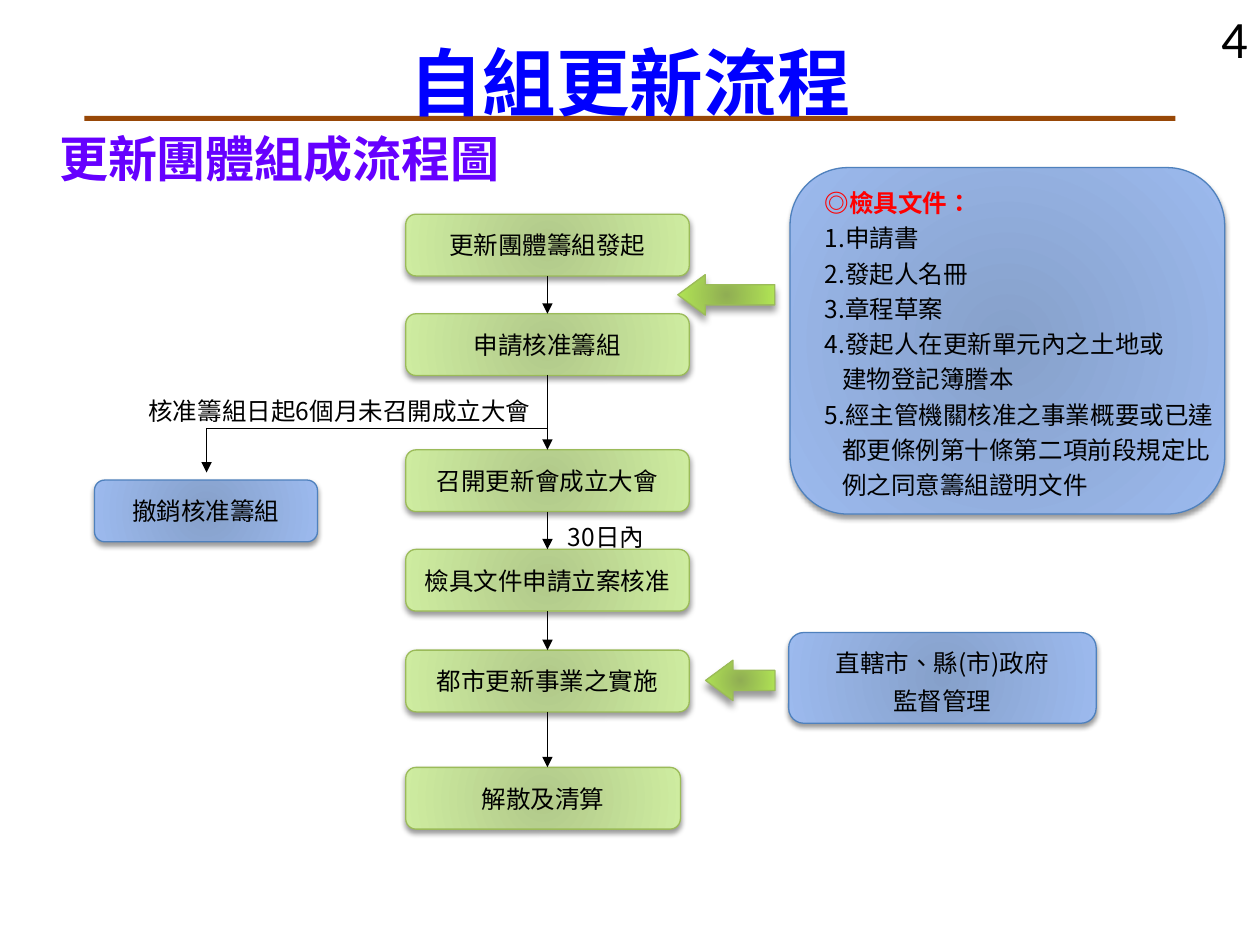
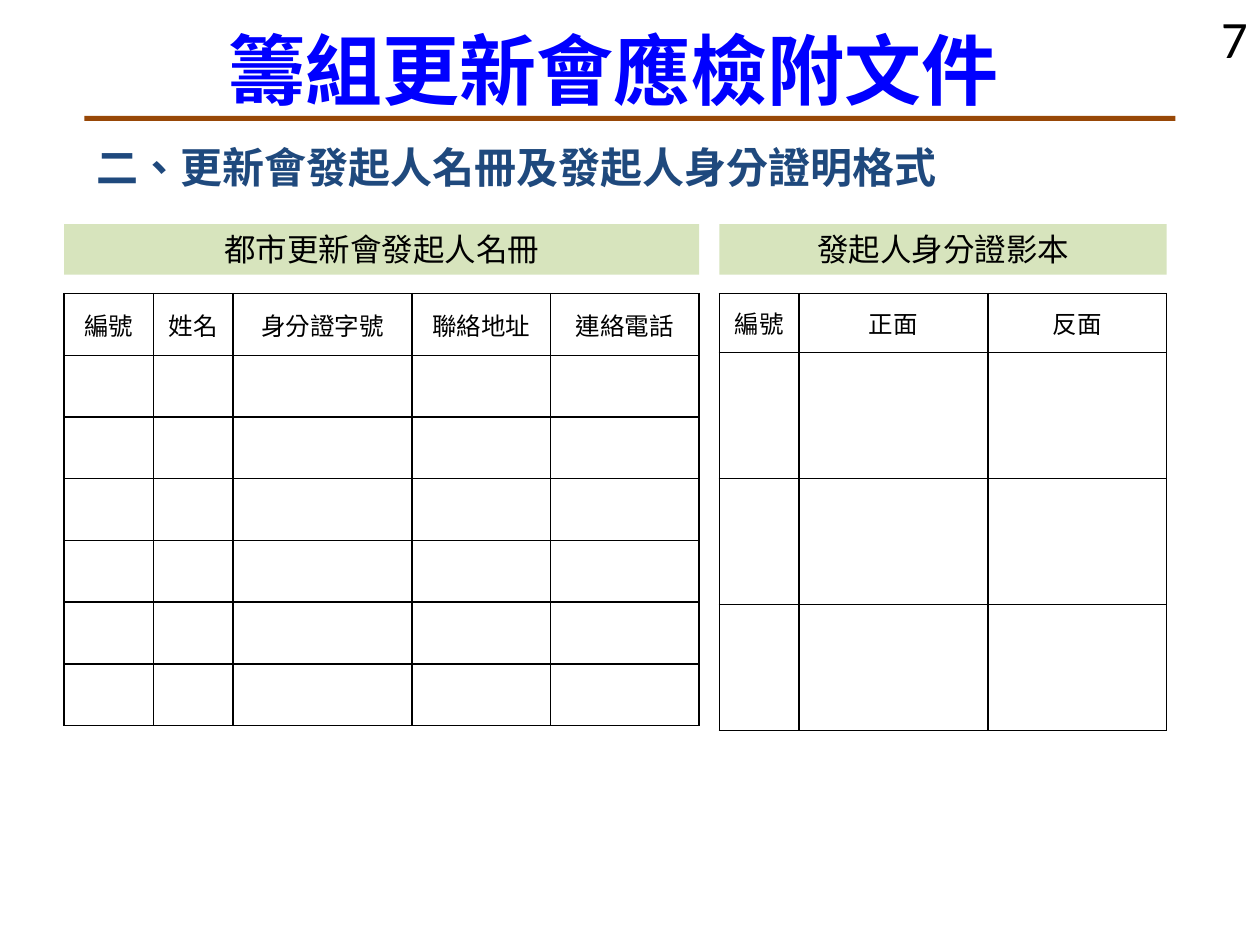
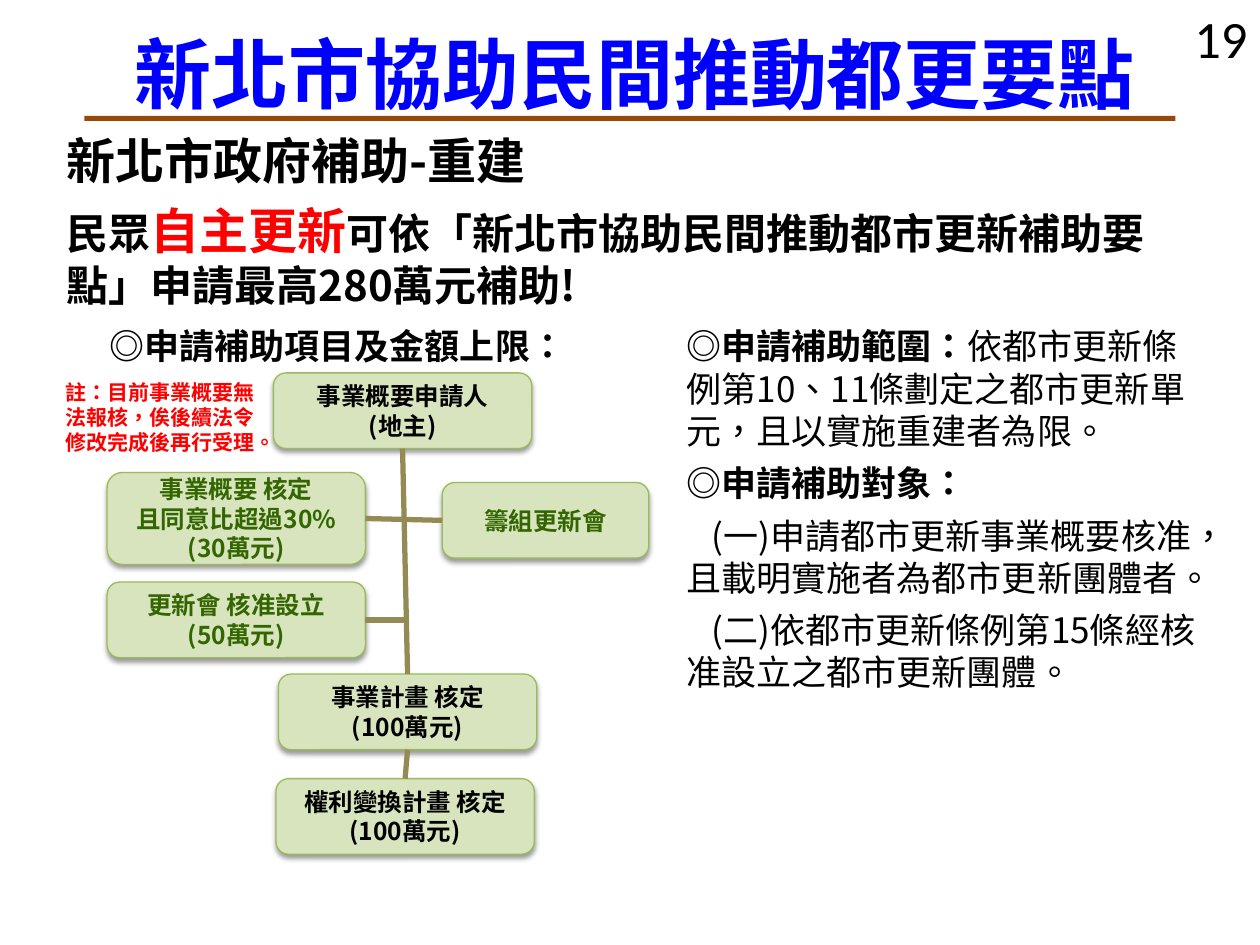
from dataclasses import dataclass
from lxml.etree import SubElement
from pptx import Presentation
from pptx.dml.color import RGBColor
from pptx.enum.shapes import MSO_CONNECTOR, MSO_SHAPE
from pptx.enum.text import MSO_ANCHOR, PP_ALIGN
from pptx.oxml.ns import qn
from pptx.util import Inches, Pt


@dataclass(frozen=True)
class Theme:
    font: str = "Noto Sans CJK SC"
    digit: str = "Calibri"
    black: str = "000000"
    red: str = "FF0000"
    blue: str = "0000FF"
    violet: str = "6600FF"
    navy: str = "1F497D"
    forest: str = "336600"
    band: str = "984807"
    pale: str = "D7E4BD"
    trunk: str = "948A54"
    edge: str = "9BBB59"
    green: tuple = ("B1C98A", "CEECA0", "9BBB59")
    sky: tuple = ("86A0CA", "9CBAEE", "4F81BD")
    lime: tuple = ("90AE53", "B3E854", "9BBB59")
    page: int = 30
    title: int = 44
    head: int = 28
    sub: int = 24
    body: int = 20
    label: int = 18
    small: int = 14
    note: int = 12


T = Theme()
LEFT, MID, RIGHT = PP_ALIGN.LEFT, PP_ALIGN.CENTER, PP_ALIGN.RIGHT
TIGHT = (0.06, 0.03)
ROOMY = (0.1, 0.05)

STEPS = [
    ("更新團體籌組發起", 1.7, 2.25),
    ("申請核准籌組", 2.49, 2.25),
    ("召開更新會成立大會", 3.57, 2.25),
    ("檢具文件申請立案核准", 4.36, 2.25),
    ("都市更新事業之實施", 5.16, 2.25),
    ("解散及清算", 6.09, 2.18),
]
PAPERS = [
    ("1.申請書", 0.12),
    ("2.發起人名冊", 0.12),
    ("3.章程草案", 0.12),
    ("4.發起人在更新單元內之土地或", 0.12),
    ("建物登記簿謄本", 0.26),
    ("5.經主管機關核准之事業概要或已達", 0.12),
    ("都更條例第十條第二項前段規定比", 0.26),
    ("例之同意籌組證明文件", 0.26),
]
FORMS = [
    ("都市更新會發起人名冊", 0.51, ["編號", "姓名", "身分證字號", "聯絡地址", "連絡電話"],
     [0.71, 0.63, 1.42, 1.1, 1.18], [0.49] * 7),
    ("發起人身分證影本", 5.71, ["編號", "正面", "反面"],
     [0.63, 1.5, 1.42], [0.47] + [1.0] * 3),
]
NODES = {
    "owner": (["事業概要申請人", "(地主)"], (2.17, 2.96, 2.05, 0.6), T.black),
    "union": (["籌組更新會"], (3.51, 3.83, 1.64, 0.6), T.forest),
    "found": (["更新會 核准設立", "(50萬元)"], (0.85, 4.62, 2.05, 0.6), T.forest),
    "brief": (["事業概要 核定", "且同意比超過30%", "(30萬元)"], (0.85, 3.75, 2.05, 0.73), T.forest),
    "rights": (["權利變換計畫 核定", "(100萬元)"], (2.19, 6.18, 2.05, 0.6), T.black),
    "plan": (["事業計畫 核定", "(100萬元)"], (2.21, 5.35, 2.05, 0.6), T.black),
}
LINKS = [("owner", 2, "plan", 0), ("plan", 2, "rights", 0), ("brief", 3, "union", 1)]
RULES = [
    ([("◎申請補助範圍：", True),
      ("依都市更新條例第10、11條劃定之都市更新單元，且以實施重建者為限。", False)], 0),
    ([("◎申請補助對象：", True)], 0),
    ([("(一)申請都市更新事業概要核准，且載明實施者為都市更新團體者。", False)], 0.2),
    ([("(二)依都市更新條例第15條經核准設立之都市更新團體。", False)], 0.2),
]


def rgb(code):
    return RGBColor.from_string(code)


def run(text, size=T.small, color=T.black, bold=False, font=T.font):
    return text, size, color, bold, font


def para(*runs, align=LEFT, gap=0, lead=None, left=0, first=0):
    return dict(runs=runs, align=align, gap=gap, lead=lead, left=left, first=first)


def write(frame, paras, anchor=MSO_ANCHOR.TOP, inset=ROOMY, wrap=True):
    frame.word_wrap = wrap
    frame.vertical_anchor = anchor
    frame.margin_left = frame.margin_right = Inches(inset[0])
    frame.margin_top = frame.margin_bottom = Inches(inset[1])
    fill_text(frame, paras)


def fill_text(frame, paras):
    for i, item in enumerate(paras):
        p = frame.add_paragraph() if i else frame.paragraphs[0]
        p.alignment = item["align"]
        if i and item["gap"]:
            p.space_before = Pt(item["gap"])
        if item["lead"]:
            p.line_spacing = item["lead"]
        props = p._p.get_or_add_pPr()
        props.set("marL", str(Inches(item["left"])))
        props.set("indent", str(Inches(item["first"])))
        for text, size, color, bold, font in item["runs"]:
            r = p.add_run()
            r.text = text
            r.font.size, r.font.bold, r.font.name = Pt(size), bold, font
            r.font.color.rgb = rgb(color)
            mark = r._r.get_or_add_rPr()
            mark.set("lang", "zh-TW")
            SubElement(mark, qn("a:ea"), typeface=font)


def add_text(slide, place, paras, **style):
    box = slide.shapes.add_textbox(*map(Inches, place))
    write(box.text_frame, paras, **style)


def add_box(slide, kind, place, fill, edge=None, glow=None):
    box = slide.shapes.add_shape(kind, *map(Inches, place))
    box.shadow.inherit = False
    if isinstance(fill, tuple):
        blend(box, fill)
    else:
        box.fill.solid()
        box.fill.fore_color.rgb = rgb(fill)
    if edge:
        box.line.color.rgb = rgb(edge)
        box.line.width = Pt(0.75)
    else:
        box.line.fill.background()
    if glow:
        shade(box, *glow)
    return box


def blend(box, tones):
    box.fill.gradient()
    for stop, tone in zip(box.fill.gradient_stops, tones):
        stop.color.rgb = rgb(tone)
    grad = box._element.spPr.find(qn("a:gradFill"))
    grad.remove(grad.find(qn("a:lin")))
    ring = SubElement(grad, qn("a:path"))
    ring.set("path", "circle")
    SubElement(ring, qn("a:fillToRect"), **dict.fromkeys("ltrb", "100000"))


def shade(box, blur, dist):
    group = box._element.spPr.find(qn("a:effectLst"))
    cast = SubElement(group, qn("a:outerShdw"), blurRad=str(Pt(blur)),
                      dist=str(Pt(dist)), dir="5400000", rotWithShape="0")
    tone = SubElement(cast, qn("a:srgbClr"), val=T.black)
    SubElement(tone, qn("a:alpha"), val="40000")


def add_card(slide, place, tones, paras, inset=TIGHT):
    card = add_box(slide, MSO_SHAPE.FLOWCHART_ALTERNATE_PROCESS, place, tones[:2], tones[2], (3, 2))
    write(card.text_frame, paras, anchor=MSO_ANCHOR.MIDDLE, inset=inset, wrap=False)
    return card


def add_line(slide, start, end, color=T.black, width=0.75, arrow=False):
    line = slide.shapes.add_connector(MSO_CONNECTOR.STRAIGHT, *map(Inches, start + end))
    line.line.color.rgb = rgb(color)
    line.line.width = Pt(width)
    if arrow:
        SubElement(line.line._get_or_add_ln(), qn("a:tailEnd"), type="triangle")
    SubElement(line._element.spPr, qn("a:effectLst"))
    return line


def add_grid(slide, place, heads, cols, rows):
    grid = slide.shapes.add_table(len(rows), len(cols), *map(Inches, place)).table
    grid.first_row = grid.horz_banding = False
    for col, width in zip(grid.columns, cols):
        col.width = Inches(width)
    for row, height in zip(grid.rows, rows):
        row.height = Inches(height)
    for cell in grid.iter_cells():
        cell.fill.background()
        props = cell._tc.get_or_add_tcPr()
        for i, side in enumerate(("lnL", "lnR", "lnT", "lnB")):
            rim = SubElement(props, qn("a:" + side), w=str(Pt(1)))
            SubElement(SubElement(rim, qn("a:solidFill")), qn("a:srgbClr"), val=T.black)
            props.insert(i, rim)
    for i, head in enumerate(heads):
        cell = grid.cell(0, i)
        cell.vertical_anchor = MSO_ANCHOR.MIDDLE
        fill_text(cell.text_frame, [para(run(head), align=MID)])


def start(deck, page, title, place, size=T.title, **style):
    slide = deck.slides.add_slide(deck.slide_layouts[6])
    add_text(slide, (7.67, 0, 2.33, 0.4),
             [para(run(page, T.page, font=T.digit), align=RIGHT)])
    add_box(slide, MSO_SHAPE.RECTANGLE, (0.67, 0.92, 8.66, 0.04), T.band)
    add_text(slide, place, [para(run(title, size, T.blue, True), align=MID)], **style)
    return slide


def draw_flow(deck):
    slide = start(deck, "4", "自組更新流程", (0, 0.29, 10, 0.71), 42,
                  anchor=MSO_ANCHOR.MIDDLE, inset=(0, 0))
    add_text(slide, (0.41, 0.99, 5, 0.74),
             [para(run("更新團體組成流程圖", T.head, T.violet, True))], inset=TIGHT)
    cards = [add_card(slide, (3.22, top, width, 0.49), T.green, [para(run(text), align=MID)])
             for text, top, width in STEPS]
    for upper, lower in zip(cards, cards[1:]):
        axis = upper.left + upper.width // 2
        line = add_line(slide, (4.34, upper.top.inches + 0.49), (4.34, lower.top.inches), arrow=True)
        line.begin_connect(upper, 2)
        if lower.left + lower.width // 2 == axis:
            line.end_connect(lower, 0)
        else:
            line.end_x = axis
    papers = [para(run("◎檢具文件：", color=T.red, bold=True), lead=1.2, left=0.12)]
    papers += [para(run(text), lead=1.2, left=left) for text, left in PAPERS]
    add_card(slide, (6.27, 1.33, 3.45, 2.75), T.sky, papers, (0.02, 0.03))
    add_line(slide, (1.64, 3.4), (4.34, 3.4))
    add_line(slide, (1.64, 3.4), (1.64, 3.75), arrow=True)
    add_card(slide, (0.75, 3.81, 1.77, 0.49), T.sky, [para(run("撤銷核准籌組"), align=MID)])
    add_card(slide, (6.26, 5.02, 2.44, 0.72), T.sky,
             [para(run(text), align=MID, lead=1.28) for text in ("直轄市、縣(市)政府", "監督管理")])
    for left, top, width in ((5.38, 2.18, 0.77), (5.6, 5.24, 0.55)):
        arrow = add_box(slide, MSO_SHAPE.LEFT_ARROW, (left, top, width, 0.32),
                        T.lime[:2], T.lime[2], (4, 3.4))
        arrow.adjustments[1] = 0.68
    for text, place in (("核准籌組日起6個月未召開成立大會", (1.06, 3.11, 3.27, 0.29)),
                        ("30日內", (4.31, 4.11, 1, 0.29))):
        add_text(slide, place, [para(run(text), align=MID)], inset=TIGHT)


def draw_forms(deck):
    slide = start(deck, "7", "籌組更新會應檢附文件", (1.69, 0.13, 6.37, 0.84), wrap=False)
    add_text(slide, (0.67, 1.07, 8.43, 0.91),
             [para(run("二、更新會發起人名冊及發起人身分證明格式", T.sub, T.navy, True))])
    for name, left, heads, cols, rows in FORMS:
        width = sum(cols)
        label = add_box(slide, MSO_SHAPE.RECTANGLE, (left, 1.78, width, 0.4), T.pale)
        write(label.text_frame, [para(run(name, T.label), align=MID)])
        add_grid(slide, (left, 2.33, width, sum(rows)), heads, cols, rows)


def draw_grant(deck):
    slide = start(deck, "19", "新北市協助民間推動都更要點", (0.04, 0.21, 10, 0.74),
                  anchor=MSO_ANCHOR.MIDDLE, inset=(0, 0))
    add_text(slide, (0.43, 0.99, 9.29, 1.53), [
        para(run("新北市政府補助-重建", T.head, bold=True)),
        para(run("民眾", T.sub, bold=True),
             run("自主更新", T.head, T.red, True),
             run("可依「新北市協助民間推動都市更新補助要點」申請最高280萬元補助!", T.sub, bold=True),
             gap=6),
    ])
    add_text(slide, (0.42, 2.96, 1.75, 0.71),
             [para(run("註：目前事業概要無法報核，俟後續法令修改完成後再行受理。", T.note, T.red, True))])
    add_text(slide, (0.77, 2.53, 3.88, 0.44),
             [para(run("◎申請補助項目及金額上限：", T.body, bold=True))], wrap=False)
    add_text(slide, (5.35, 2.53, 4.29, 3.05),
             [para(*(run(text, T.body, bold=bold) for text, bold in runs), gap=6, first=first)
              for runs, first in RULES])
    nodes = {}
    for key, (lines, place, color) in NODES.items():
        node = add_box(slide, MSO_SHAPE.ROUNDED_RECTANGLE, place, T.pale, T.edge, (3, 2))
        write(node.text_frame, [para(run(text, color=color, bold=True), align=MID) for text in lines],
              anchor=MSO_ANCHOR.MIDDLE)
        nodes[key] = node
    for head, out, tail, into in LINKS:
        line = add_line(slide, (0, 0), (1, 1), T.trunk, 3)
        line.begin_connect(nodes[head], out)
        line.end_connect(nodes[tail], into)
    twig = add_line(slide, (2.9, 4.92), (3.22, 4.92), T.trunk, 3)
    twig.begin_connect(nodes["found"], 3)


def main():
    deck = Presentation()
    deck.slide_width, deck.slide_height = Inches(10), Inches(7.5)
    draw_flow(deck)
    draw_forms(deck)
    draw_grant(deck)
    deck.save("out.pptx")


if __name__ == "__main__":
    main()
